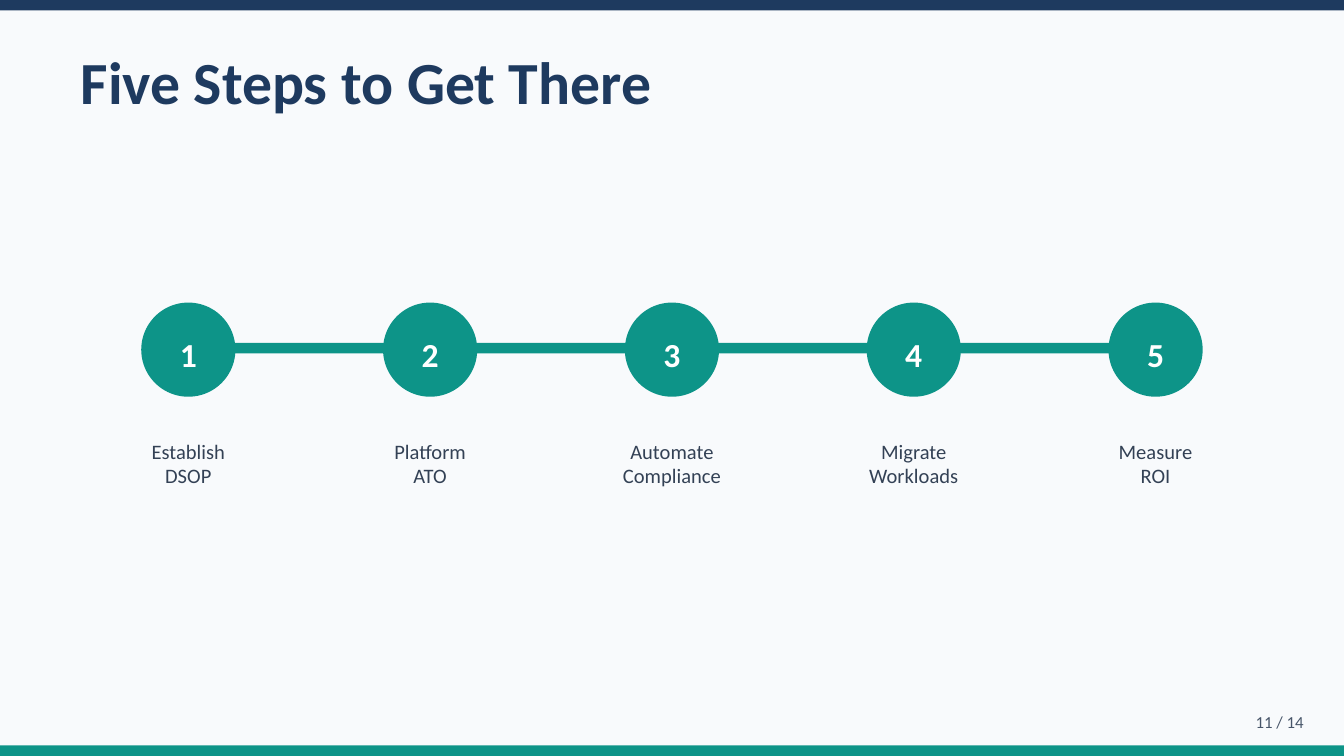
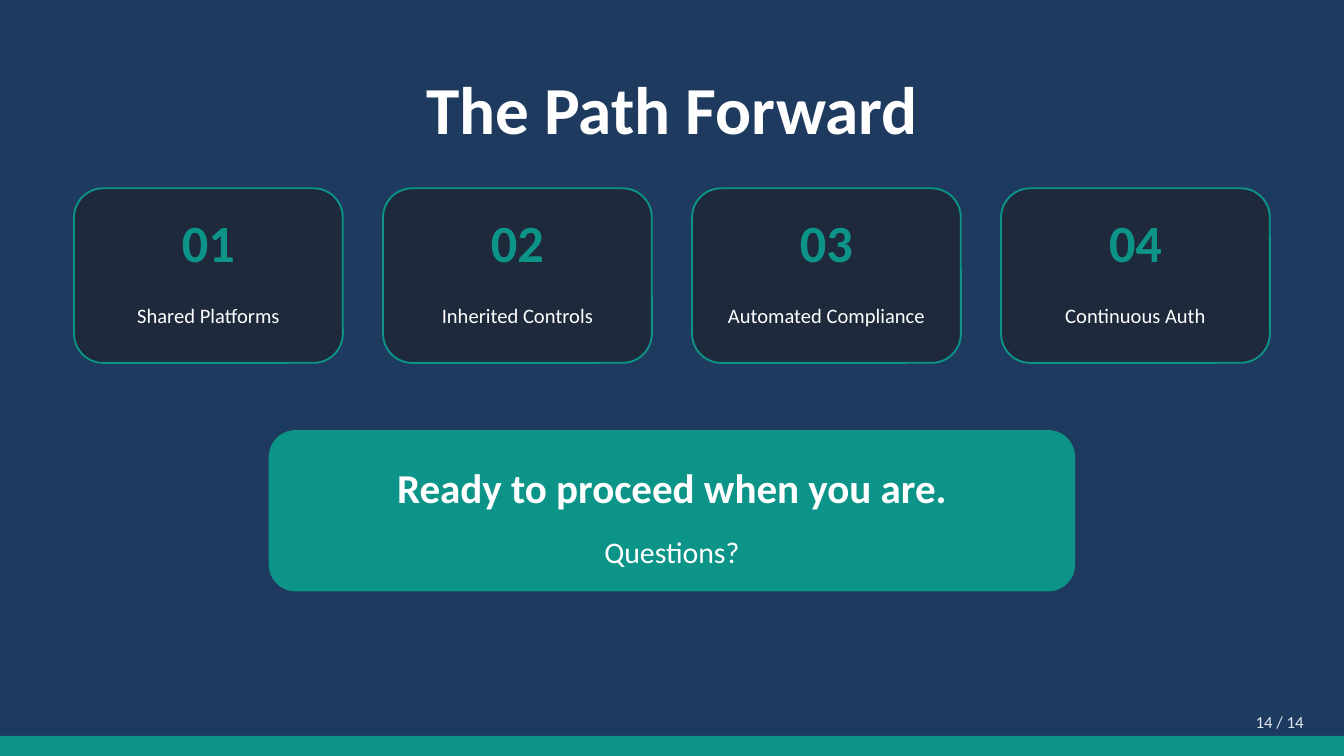
from pptx import Presentation
from pptx.dml.color import RGBColor
from pptx.enum.shapes import MSO_SHAPE as Shape
from pptx.enum.text import MSO_ANCHOR as Anchor, MSO_AUTO_SIZE as AutoSize, PP_ALIGN as Align
from pptx.util import Cm, Pt

FONT = "Calibri"
SLIDE_WIDTH, SLIDE_HEIGHT = 25.4, 14.29
TITLE_LEFT, TITLE_WIDTH, TITLE_HEIGHT = 1.27, 22.86, 1.52
TITLE_ONLY = 5
PAGE_COUNT = 14
COLORS = {
    "navy": "1E3A5F",
    "teal": "0D9488",
    "paper": "F8FAFC",
    "card": "1E293B",
    "white": "FFFFFF",
    "body": "334155",
    "page": "475569",
    "page_on_dark": "E2E8F0",
}


def color(name):
    return RGBColor.from_string(COLORS[name])


def write(shape, text, size, color_name, bold=False, align=Align.CENTER):
    """Fill a shape with text, one paragraph per line, all in one style."""
    frame = shape.text_frame
    frame.text = text
    frame.word_wrap = True
    frame.auto_size = AutoSize.NONE
    frame.vertical_anchor = Anchor.MIDDLE
    for paragraph in frame.paragraphs:
        paragraph.alignment = align
        for run in paragraph.runs:
            run.font.name = FONT
            run.font.size = Pt(size)
            run.font.bold = bold
            run.font.color.rgb = color(color_name)


def add_text(slide, left, top, width, height, text, size, color_name, **style):
    shape = slide.shapes.add_textbox(Cm(left), Cm(top), Cm(width), Cm(height))
    write(shape, text, size, color_name, **style)


def add_block(slide, kind, left, top, width, height, fill, line=None):
    shape = slide.shapes.add_shape(kind, Cm(left), Cm(top), Cm(width), Cm(height))
    shape.shadow.inherit = False
    shape.fill.solid()
    shape.fill.fore_color.rgb = color(fill)
    if line:
        shape.line.color.rgb = color(line)
        shape.line.width = Pt(1)
    else:
        shape.line.fill.background()


def add_band(slide, top, height, fill):
    add_block(slide, Shape.RECTANGLE, 0, top, SLIDE_WIDTH, height, fill)


def add_title(slide, text, top, size, color_name, align):
    title = slide.shapes.title
    title.left, title.top = Cm(TITLE_LEFT), Cm(top)
    title.width, title.height = Cm(TITLE_WIDTH), Cm(TITLE_HEIGHT)
    write(title, text, size, color_name, bold=True, align=align)


def add_slide(presentation, background, footer_height):
    """Start a slide with its background and the teal band at the bottom."""
    slide = presentation.slides.add_slide(presentation.slide_layouts[TITLE_ONLY])
    slide.background.fill.solid()
    slide.background.fill.fore_color.rgb = color(background)
    add_band(slide, SLIDE_HEIGHT - footer_height, footer_height, "teal")
    return slide


def add_page_number(slide, number, color_name):
    add_text(slide, 22.86, 13.26, 2.03, 0.76, f"{number} / {PAGE_COUNT}", 9,
             color_name, align=Align.RIGHT)


def add_timeline(slide, steps):
    pitch, diameter, label_width = 4.57, 1.78, 3.81
    span = pitch * (len(steps) - 1)
    first_center = (SLIDE_WIDTH - span) / 2
    add_block(slide, Shape.RECTANGLE, first_center, 6.48, span, 0.2, "teal")
    for index, label in enumerate(steps):
        center = first_center + index * pitch
        left = center - diameter / 2
        add_block(slide, Shape.OVAL, left, 5.72, diameter, diameter, "teal")
        add_text(slide, left, 6.05, diameter, 1.27, str(index + 1), 18, "white", bold=True)
        add_text(slide, center - label_width / 2, 7.87, label_width, 1.78, label, 11, "body")


def add_cards(slide, labels):
    width, gap = 5.08, 0.76
    first_left = (SLIDE_WIDTH - len(labels) * (width + gap) + gap) / 2
    for index, label in enumerate(labels):
        left = first_left + index * (width + gap)
        add_block(slide, Shape.ROUNDED_RECTANGLE, left, 3.56, width, 3.3, "card", line="teal")
        add_text(slide, left, 3.81, width, 1.52, f"{index + 1:02}", 28, "teal", bold=True)
        add_text(slide, left, 5.46, width, 1.02, label, 11, "white")


def add_closing_banner(slide, message, prompt):
    left, width = 5.08, 15.24
    add_block(slide, Shape.ROUNDED_RECTANGLE, left, 8.13, width, 3.05, "teal")
    add_text(slide, left, 8.51, width, 1.4, message, 22, "white", bold=True)
    add_text(slide, left, 9.91, width, 1.02, prompt, 16, "white")


def build_steps_slide(presentation):
    slide = add_slide(presentation, "paper", footer_height=0.2)
    add_band(slide, 0, 0.2, "navy")
    add_title(slide, "Five Steps to Get There", 0.76, 32, "navy", Align.LEFT)
    add_timeline(slide, [
        "Establish\nDSOP",
        "Platform\nATO",
        "Automate\nCompliance",
        "Migrate\nWorkloads",
        "Measure\nROI",
    ])
    add_page_number(slide, 11, "page")


def build_closing_slide(presentation):
    slide = add_slide(presentation, "navy", footer_height=0.38)
    add_title(slide, "The Path Forward", 1.27, 36, "white", Align.CENTER)
    add_cards(slide, [
        "Shared Platforms",
        "Inherited Controls",
        "Automated Compliance",
        "Continuous Auth",
    ])
    add_closing_banner(slide, "Ready to proceed when you are.", "Questions?")
    add_page_number(slide, 14, "page_on_dark")


def main():
    presentation = Presentation()
    presentation.slide_width = Cm(SLIDE_WIDTH)
    presentation.slide_height = Cm(SLIDE_HEIGHT)
    build_steps_slide(presentation)
    build_closing_slide(presentation)
    presentation.save("out.pptx")


if __name__ == "__main__":
    main()
